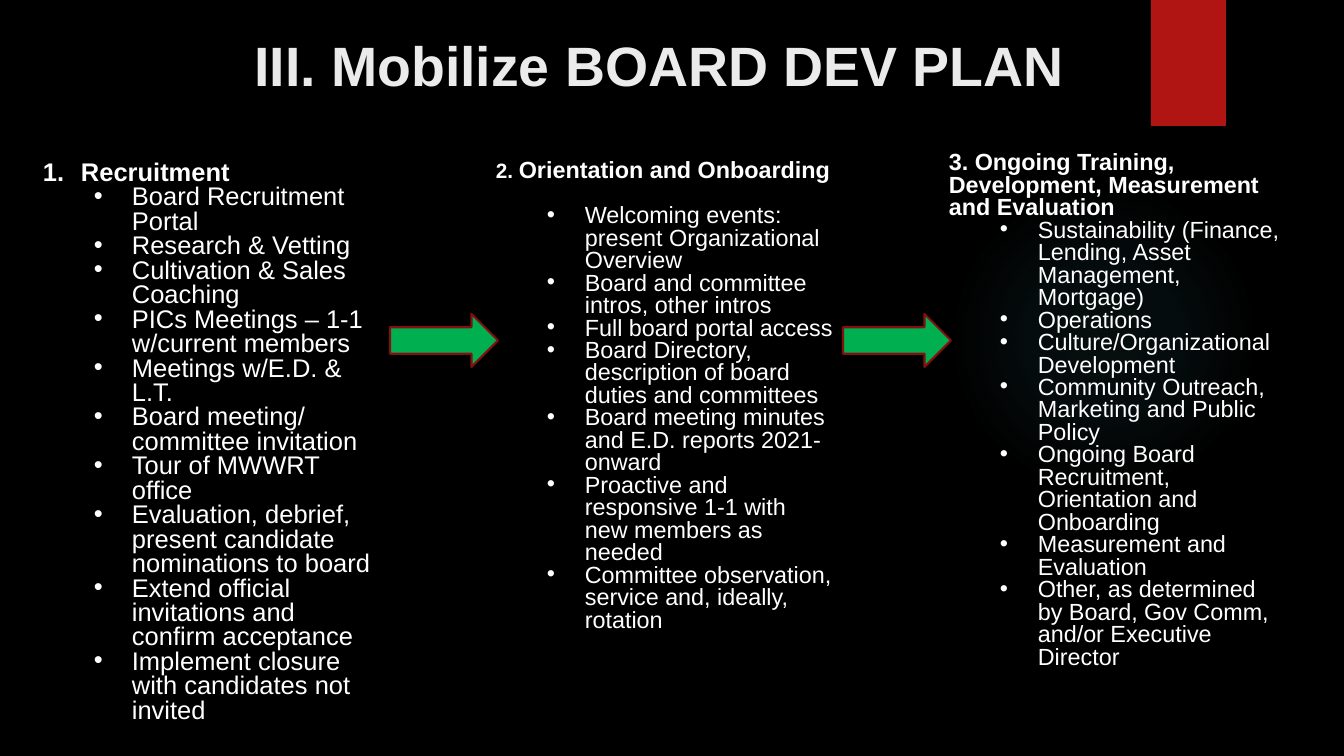
"""Build the board development plan slide."""
from lxml import etree
from pptx import Presentation
from pptx.dml.color import RGBColor
from pptx.enum.shapes import MSO_SHAPE as SHAPE
from pptx.enum.text import MSO_ANCHOR as ANCHOR, PP_ALIGN as ALIGN
from pptx.oxml import parse_xml
from pptx.oxml.ns import nsdecls, qn
from pptx.util import Emu, Pt

BLACK = RGBColor(0x00, 0x00, 0x00)
WHITE = RGBColor(0xFF, 0xFF, 0xFF)
TITLE_GREY = RGBColor(0xEB, 0xEB, 0xEB)
RED = RGBColor(0xB0, 0x15, 0x13)
DARK_RED = RGBColor(0x82, 0x10, 0x0E)
GREEN = RGBColor(0x00, 0xB0, 0x50)
PX = 914400 / 100.8
COLUMN_STEP = 453


def px(*lengths):
    return [Emu(round(n * PX)) for n in lengths]


def add_run(p, text, size, bold, color=WHITE):
    r = p.add_run()
    r.text = text
    for name, value in {"name": "Arial", "size": Pt(size), "bold": bold}.items():
        setattr(r.font, name, value)
    r.font.color.rgb = color


prs = Presentation()
prs.slide_width, prs.slide_height = px(1344, 756)
s = prs.slides.add_slide(prs.slide_layouts[6])
s.background.fill.solid()
s.background.fill.fore_color.rgb = BLACK

glow = s.shapes.add_shape(SHAPE.OVAL, *px(949, 184, 310, 310))
glow.shadow.inherit = False
glow.line.fill.background()
stops = "".join(
    f'<a:gs pos="{pos}000"><a:srgbClr val="50B9C1"><a:alpha val="{alpha}000"/></a:srgbClr></a:gs>'
    for pos, alpha in [(0, 7), (36, 6), (69, 0), (100, 0)]
)
glow.element.spPr.find(qn("a:prstGeom")).addnext(parse_xml(
    f'<a:gradFill {nsdecls("a")}><a:gsLst>{stops}</a:gsLst><a:path path="circle">'
    '<a:fillToRect l="50000" t="50000" r="50000" b="50000"/></a:path></a:gradFill>'
))

ribbon = s.shapes.add_shape(SHAPE.RECTANGLE, *px(1151, 0, 75, 126))
ribbon.shadow.inherit = False
ribbon.fill.solid()
ribbon.fill.fore_color.rgb = RED
ribbon.line.fill.background()

title = s.shapes.add_textbox(*px(64, 26, 1191, 79))
tf = title.text_frame
tf.word_wrap = True
tf.vertical_anchor = ANCHOR.TOP
tf.margin_top = px(5)[0]
tf.paragraphs[0].alignment = ALIGN.CENTER
add_run(tf.paragraphs[0], "III. Mobilize BOARD DEV PLAN", 39.6, True, TITLE_GREY)

columns = [
    (157, 357, 547, 18.2, 0, [("Recruitment", 18.2)], [
        "Board Recruitment Portal",
        "Research & Vetting",
        "Cultivation & Sales Coaching",
        "PICs Meetings – 1-1 w/current members",
        "Meetings w/E.D. & L.T.",
        "Board meeting/ committee invitation",
        "Tour of MWWRT office",
        "Evaluation, debrief, present candidate nominations to board",
        "Extend official invitations and confirm acceptance",
        "Implement closure with candidates not invited",
    ]),
    (156, 357, 540, 16.7, 16, [("2. ", 14.8), ("Orientation and Onboarding", 16.7)], [
        "Welcoming events: present Organizational Overview",
        "Board and committee intros, other intros",
        "Full board portal access",
        "Board Directory, description of board duties and committees",
        "Board meeting minutes and E.D. reports 2021-onward",
        "Proactive and responsive 1-1 with new members as needed",
        "Committee observation, service and, ideally, rotation",
    ]),
    (148, 354, 540, 16.7, 0,
     [("3. Ongoing Training, Development, Measurement and Evaluation", 16.7)], [
        "Sustainability (Finance, Lending, Asset Management, Mortgage)",
        "Operations",
        "Culture/Organizational Development",
        "Community Outreach, Marketing and Public Policy",
        "Ongoing Board Recruitment, Orientation and Onboarding",
        "Measurement and Evaluation",
        "Other, as determined by Board, Gov Comm, and/or Executive Director",
    ]),
]
for i, (top, width, height, size, gap, heading, items) in enumerate(columns):
    box = s.shapes.add_textbox(*px(33 + i * COLUMN_STEP, top, width, height))
    tf = box.text_frame
    tf.word_wrap = True
    p = tf.paragraphs[0]
    p.line_spacing = 0.8
    for text, heading_size in heading:
        add_run(p, text, heading_size, True)
    if i == 0:
        pPr = p._p.get_or_add_pPr()
        pPr.set("marL", str(px(38)[0]))
        pPr.set("indent", str(px(-38)[0]))
        etree.SubElement(pPr, qn("a:buFont"), typeface="+mj-lt")
        etree.SubElement(pPr, qn("a:buAutoNum"), type="arabicPeriod")
    for k, item in enumerate(items):
        p = tf.add_paragraph()
        p.level = 1
        p.line_spacing = 0.8
        p.space_before = Pt(gap if k == 0 else 0)
        pPr = p._p.get_or_add_pPr()
        pPr.set("marL", str(px(89)[0]))
        pPr.set("indent", str(px(-38)[0]))
        etree.SubElement(pPr, qn("a:buFont"), typeface="Arial")
        etree.SubElement(pPr, qn("a:buChar"), char="•")
        add_run(p, item, size, False)

for i in range(2):
    arrow = s.shapes.add_shape(SHAPE.RIGHT_ARROW, *px(390 + i * COLUMN_STEP, 314, 108, 53))
    arrow.shadow.inherit = False
    arrow.fill.solid()
    arrow.fill.fore_color.rgb = GREEN
    arrow.line.color.rgb = DARK_RED
    arrow.line.width = Pt(1.5)

prs.save("out.pptx")
